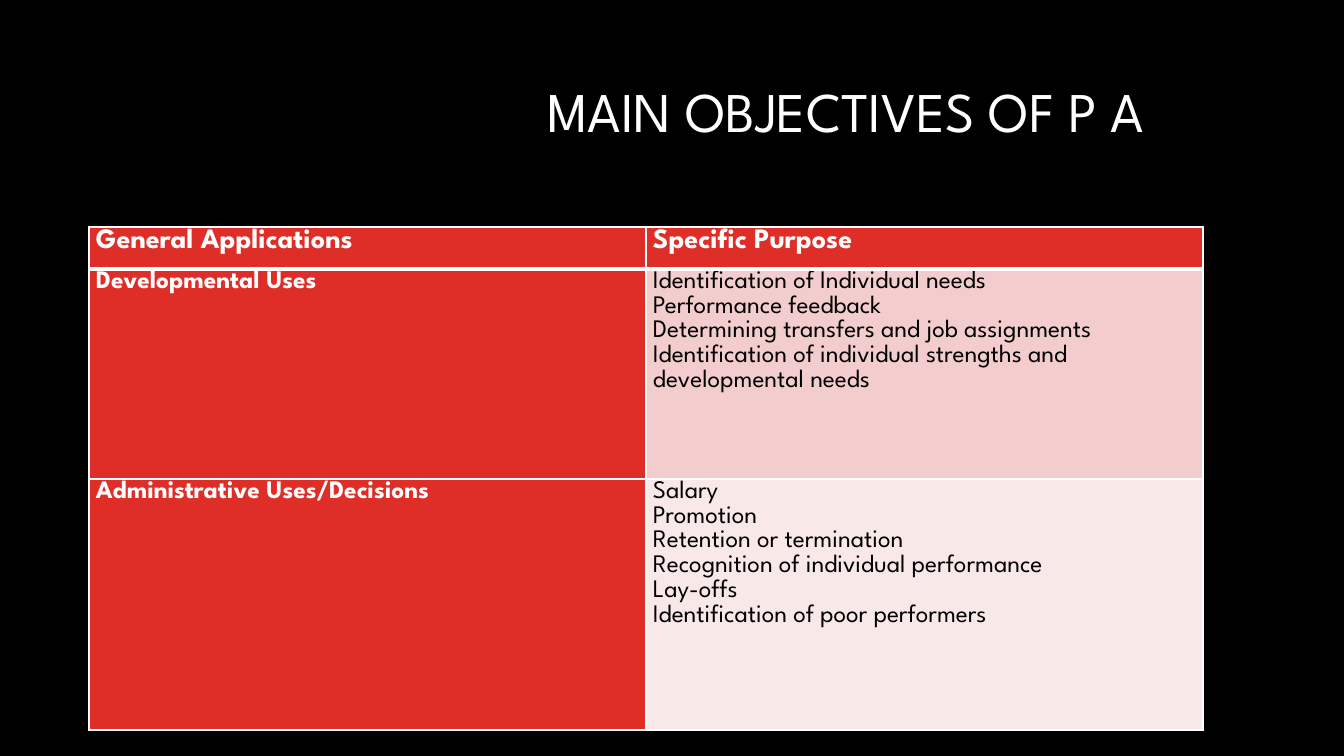
"""Build the slide on the main objectives of P A."""
from lxml.etree import SubElement
from pptx import Presentation
from pptx.dml.color import RGBColor
from pptx.enum.text import MSO_ANCHOR, PP_ALIGN
from pptx.oxml.ns import qn
from pptx.util import Pt

PX = 914400 / 100.8
FONT = "League Spartan"
COLORS = {
    "black": "000000",
    "white": "FFFFFF",
    "red": "DF2E28",
    "rose": "F3CDCD",
    "blush": "F9E8E8",
}


def write_text(frame, text, size, color, bold=False, align=PP_ALIGN.LEFT, spacing=1.07):
    """Fill a text frame with one paragraph per line of text."""
    frame.word_wrap = True
    frame.text = text
    for paragraph in frame.paragraphs:
        paragraph.alignment = align
        paragraph.line_spacing = spacing
        font = paragraph.runs[0].font
        font.name = FONT
        font.size = Pt(size)
        font.bold = bold
        font.color.rgb = RGBColor.from_string(COLORS[color])


def set_borders(cell, widths):
    """Draw white borders, given as widths in points by side."""
    properties = cell._tc.get_or_add_tcPr()
    for position, side in enumerate("LRTB"):
        line = SubElement(properties, qn(f"a:ln{side}"), w=str(Pt(widths[side])))
        fill = SubElement(line, qn("a:solidFill"))
        SubElement(fill, qn("a:srgbClr"), val=COLORS["white"])
        properties.insert(position, line)


presentation = Presentation()
presentation.slide_width = round(1344 * PX)
presentation.slide_height = round(756 * PX)
slide = presentation.slides.add_slide(presentation.slide_layouts[6])
slide.background.fill.solid()
slide.background.fill.fore_color.rgb = RGBColor.from_string(COLORS["black"])

title_box = [round(length * PX) for length in (219, 43, 949, 142)]
title = slide.shapes.add_textbox(*title_box).text_frame
title.vertical_anchor = MSO_ANCHOR.MIDDLE
write_text(title, "MAIN OBJECTIVES OF P A ", size=40, color="white",
           align=PP_ALIGN.RIGHT, spacing=0.9)

developmental_purposes = [
    "Identification of Individual needs",
    "Performance feedback",
    "Determining transfers and job assignments",
    "Identification of individual strengths and developmental needs",
]
administrative_purposes = [
    "Salary",
    "Promotion",
    "Retention or termination",
    "Recognition of individual performance",
    "Lay-offs",
    "Identification of poor performers",
]
rows = [
    (42, "General Applications", ["Specific Purpose"], "red"),
    (210, "Developmental Uses", developmental_purposes, "rose"),
    (251, "Administrative Uses/Decisions", administrative_purposes, "blush"),
]

table_box = [round(length * PX) for length in (89, 227, 1114, 503)]
table = slide.shapes.add_table(len(rows), 2, *table_box).table
for column in table.columns:
    column.width = round(557 * PX)

for row_index, (height, application, purposes, purpose_fill) in enumerate(rows):
    table.rows[row_index].height = round(height * PX)
    is_header = row_index == 0
    texts = (application, "\n".join(purposes))
    for column_index, (text, fill) in enumerate(zip(texts, ("red", purpose_fill))):
        cell = table.cell(row_index, column_index)
        cell.margin_left = cell.margin_right = round(7 * PX)
        cell.margin_top = cell.margin_bottom = 0
        cell.fill.solid()
        cell.fill.fore_color.rgb = RGBColor.from_string(COLORS[fill])
        on_red = fill == "red"
        write_text(cell.text_frame, text, size=20 if is_header else 18,
                   color="white" if on_red else "black", bold=on_red)
        set_borders(cell, {"L": 1, "R": 1, "T": 3 if row_index == 1 else 1,
                           "B": 3 if is_header else 1})

presentation.save("out.pptx")
